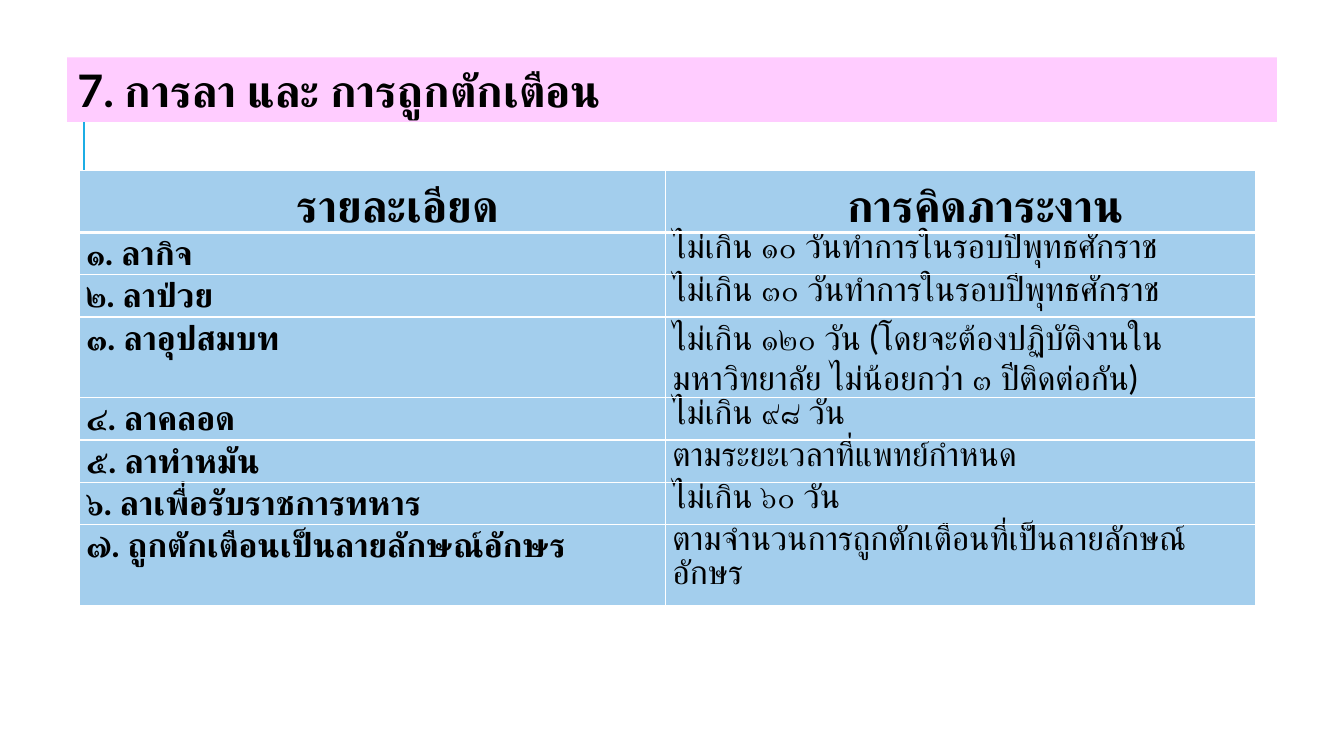
from lxml import etree
from pptx import Presentation
from pptx import util as u
from pptx.dml.color import RGBColor
from pptx.enum import shapes, text
from pptx.oxml import ns

WIDTH, HEIGHT = 13.33, 7.5
FONT = "Lato"
COLOURS = {"band": "FFCCFF", "cell": "A3CEED", "rule": "FFFFFF",
           "accent": "1CADE4", "ink": "000000"}
TITLE = "7. การลา และ การถูกตักเตือน"
HEADINGS = ("รายละเอียด", "การคิดภาระงาน")
LEAVE_RULES = [
    ("๑. ลากิจ", "ไม่เกิน ๑๐ วันทำการในรอบปีพุทธศักราช"),
    ("๒. ลาป่วย", "ไม่เกิน ๓๐ วันทำการในรอบปีพุทธศักราช"),
    ("๓. ลาอุปสมบท",
     "ไม่เกิน ๑๒๐ วัน (โดยจะต้องปฏิบัติงานในมหาวิทยาลัย ไม่น้อยกว่า ๓ ปีติดต่อกัน)"),
    ("๔. ลาคลอด", "ไม่เกิน ๙๘ วัน"),
    ("๕. ลาทำหมัน", "ตามระยะเวลาที่แพทย์กำหนด"),
    ("๖. ลาเพื่อรับราชการทหาร", "ไม่เกิน ๖๐ วัน"),
    ("๗. ถูกตักเตือนเป็นลายลักษณ์อักษร",
     "ตามจำนวนการถูกตักเตือนที่เป็นลายลักษณ์อักษร"),
]
COLUMN_WIDTHS = (5.81, 5.85)
HEADER_HEIGHT, ROW_HEIGHT, TALL_HEIGHT = 0.61, 0.42, 0.8
ORDINATION_ROW, WARNING_ROW = 3, 7

HEADING_FORMAT = {"alignment": text.PP_ALIGN.CENTER, "line_spacing": 1.15}
TIGHT_FORMAT = {"line_spacing": u.Pt(24)}


def colour(name):
    return RGBColor.from_string(COLOURS[name])


def set_attributes(target, values):
    for name, value in values.items():
        setattr(target, name, value)


def write(frame, words, size, bold, paragraph_format):
    """Fill a text frame with one formatted paragraph."""
    paragraph = frame.paragraphs[0]
    set_attributes(paragraph, paragraph_format)
    run = paragraph.add_run()
    run.text = words
    set_attributes(run.font, {"size": u.Pt(size), "bold": bold, "name": FONT})
    run.font.color.rgb = colour("ink")
    # Thai letters take the complex-script font
    etree.SubElement(run.font._element, ns.qn("a:cs"), typeface=FONT)
    return paragraph


def add_borders(cell, bottom_width):
    properties = cell._tc.get_or_add_tcPr()
    widths = {"lnL": 1, "lnR": 1, "lnT": 1, "lnB": bottom_width}
    for position, (side, width) in enumerate(widths.items()):
        line = etree.Element(ns.qn("a:" + side), w=str(u.Pt(width)))
        fill = etree.SubElement(line, ns.qn("a:solidFill"))
        etree.SubElement(fill, ns.qn("a:srgbClr"), val=COLOURS["rule"])
        properties.insert(position, line)


def style_cell(cell, bottom_width=1):
    set_attributes(cell, {"margin_left": u.Inches(0.07), "margin_right": u.Inches(0.07),
                          "margin_top": 0, "margin_bottom": 0})
    cell.fill.solid()
    cell.fill.fore_color.rgb = colour("cell")
    add_borders(cell, bottom_width)


def add_title(slide):
    title = slide.shapes.title
    set_attributes(title, {"left": u.Inches(WIDTH * 0.05), "top": u.Inches(0.57),
                           "width": u.Inches(WIDTH * 0.9), "height": u.Inches(0.64)})
    title.fill.solid()
    title.fill.fore_color.rgb = colour("band")
    set_attributes(title.text_frame, {"vertical_anchor": text.MSO_ANCHOR.TOP,
                                      "word_wrap": True,
                                      "auto_size": text.MSO_AUTO_SIZE.NONE})
    write(title.text_frame, TITLE, 32, True, {"alignment": text.PP_ALIGN.LEFT})


def add_accent_line(slide):
    x = u.Inches(WIDTH / 16)
    line = slide.shapes.add_connector(shapes.MSO_CONNECTOR.STRAIGHT,
                                      x, u.Inches(1.9), x, u.Inches(0.9))
    line.line.color.rgb = colour("accent")
    line.line.width = u.Pt(1.5)
    etree.SubElement(line._element.spPr, ns.qn("a:effectLst"))
    # Send the line behind the title band
    slide.shapes._spTree.insert(2, line._element)


def add_leave_table(slide):
    heights = [HEADER_HEIGHT] + [ROW_HEIGHT] * len(LEAVE_RULES)
    heights[ORDINATION_ROW] = heights[WARNING_ROW] = TALL_HEIGHT
    table = slide.shapes.add_table(
        len(heights), len(COLUMN_WIDTHS), u.Inches(0.79), u.Inches(1.69),
        u.Inches(sum(COLUMN_WIDTHS)), u.Inches(sum(heights))).table
    for column, width in zip(table.columns, COLUMN_WIDTHS):
        column.width = u.Inches(width)
    for row, height in zip(table.rows, heights):
        row.height = u.Inches(height)

    # Header row
    for column, heading in enumerate(HEADINGS):
        cell = table.cell(0, column)
        style_cell(cell, bottom_width=3)
        paragraph = write(cell.text_frame, heading, 32, True, HEADING_FORMAT)
        paragraph._p.get_or_add_pPr().set("marL", str(u.Inches(0.5)))

    # Kinds of leave in bold, their limits in tight lines
    for row, (kind, limit) in enumerate(LEAVE_RULES, start=1):
        limit_format = {} if row == ORDINATION_ROW else TIGHT_FORMAT
        for column, words, bold, layout in ((0, kind, True, {}),
                                            (1, limit, False, limit_format)):
            cell = table.cell(row, column)
            style_cell(cell)
            write(cell.text_frame, words, 24, bold, layout)


def main():
    presentation = Presentation()
    set_attributes(presentation, {"slide_width": u.Inches(WIDTH),
                                  "slide_height": u.Inches(HEIGHT)})
    slide = presentation.slides.add_slide(presentation.slide_layouts[5])
    add_title(slide)
    add_accent_line(slide)
    add_leave_table(slide)
    presentation.save("out.pptx")


if __name__ == "__main__":
    main()
